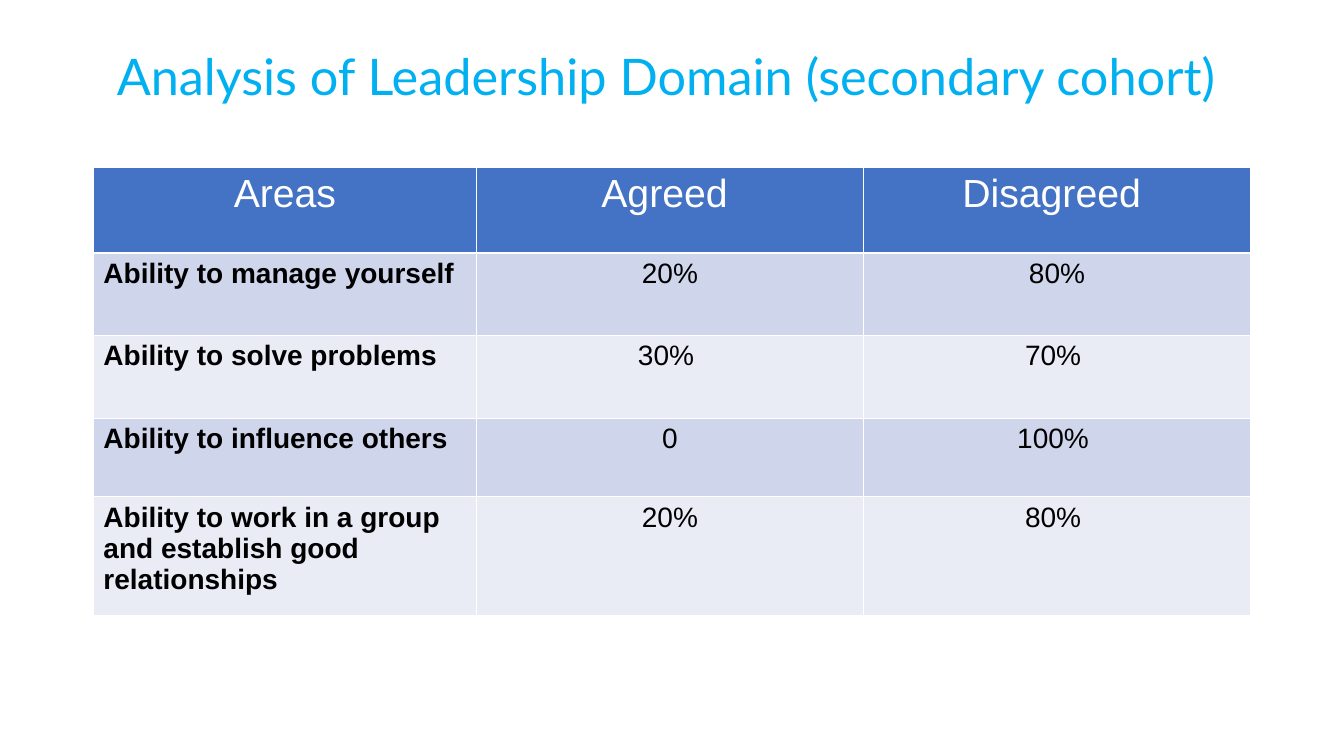
from dataclasses import dataclass

from pptx import Presentation
from pptx.dml.color import RGBColor
from pptx.enum.text import MSO_ANCHOR, MSO_AUTO_SIZE, PP_ALIGN
from pptx.util import Inches, Pt

LEFT, CENTER = PP_ALIGN.LEFT, PP_ALIGN.CENTER
MIDDLE = MSO_ANCHOR.MIDDLE
GROW = MSO_AUTO_SIZE.SHAPE_TO_FIT_TEXT
TITLE_ONLY = 5


@dataclass(frozen=True)
class Theme:
    """Colours, fonts and type sizes of the slide."""

    title_color: str = "00B0F0"
    header_fill: str = "4472C4"
    header_color: str = "FFFFFF"
    text_color: str = "000000"
    band_fills: tuple = ("CFD5EA", "E9EBF5")
    title_font: str = "Lato"
    table_font: str = "Arial"
    title_size: int = 36
    header_size: int = 28
    cell_size: int = 20


class SlideBuilder:
    """Places elements by percentages of the slide's width and height."""

    def __init__(self, presentation, theme):
        """Adds a slide with a title placeholder."""
        self.width = presentation.slide_width
        self.height = presentation.slide_height
        self.theme = theme
        self.slide = presentation.slides.add_slide(presentation.slide_layouts[TITLE_ONLY])

    def across(self, share):
        """Turns a percentage of the width into a length."""
        return round(self.width * share / 100)

    def down(self, share):
        """Turns a percentage of the height into a length."""
        return round(self.height * share / 100)

    def add_text(self, text_frame, text, alignment, color, **font_format):
        """Fills a text frame with one formatted paragraph."""
        paragraph = text_frame.paragraphs[0]
        paragraph.alignment = alignment
        run = paragraph.add_run()
        run.text = text
        for name, value in font_format.items():
            setattr(run.font, name, value)
        run.font.color.rgb = RGBColor.from_string(color)

    def title(self, text, left, top, width, height):
        """Moves and fills the title placeholder."""
        shape = self.slide.shapes.title
        placement = {"left": self.across(left), "top": self.down(top),
                     "width": self.across(width), "height": self.down(height)}
        for name, value in placement.items():
            setattr(shape, name, value)
        frame_format = {"word_wrap": True, "auto_size": GROW, "vertical_anchor": MIDDLE}
        for name, value in frame_format.items():
            setattr(shape.text_frame, name, value)
        self.add_text(shape.text_frame, text, CENTER, self.theme.title_color,
                      name=self.theme.title_font, size=Pt(self.theme.title_size), bold=False)

    def table(self, records, left, top, column_shares, row_shares):
        """Adds a table with a header row, banded rows and bold row labels."""
        theme = self.theme
        table = self.slide.shapes.add_table(
            len(row_shares), len(column_shares), self.across(left), self.down(top),
            self.across(sum(column_shares)), self.down(sum(row_shares))).table
        for column, share in zip(table.columns, column_shares):
            column.width = self.across(share)
        for row_index, (share, record) in enumerate(zip(row_shares, records)):
            table.rows[row_index].height = self.down(share)
            is_header = row_index == 0
            fill = theme.header_fill if is_header else theme.band_fills[(row_index - 1) % 2]
            color = theme.header_color if is_header else theme.text_color
            size = theme.header_size if is_header else theme.cell_size
            for column_index, text in enumerate(record):
                is_label = column_index == 0 and not is_header
                cell = table.cell(row_index, column_index)
                cell.fill.solid()
                cell.fill.fore_color.rgb = RGBColor.from_string(fill)
                self.add_text(cell.text_frame, text, LEFT if is_label else CENTER, color,
                              name=theme.table_font, size=Pt(size), bold=is_label)


def main():
    """Builds and saves the leadership slide."""
    presentation = Presentation()
    presentation.slide_width = Inches(13.33)
    presentation.slide_height = Inches(7.5)
    builder = SlideBuilder(presentation, Theme())
    survey = [
        ("Areas", "Agreed ", "Disagreed "),
        ("Ability to manage yourself", "20%", "80%"),
        ("Ability to solve problems", "30% ", "70% "),
        ("Ability to influence others", "0", "100% "),
        ("Ability to work in a group and establish good relationships", "20%", "80% "),
    ]
    builder.table(survey, left=6.95, top=22.13, column_shares=(28.5, 28.8, 28.8),
                  row_shares=(11.33, 10.93, 10.93, 10.4, 15.73))
    builder.title("Analysis of Leadership Domain (secondary cohort) ",
                  left=2.93, top=5.2, width=94.22, height=9.47)
    presentation.save("out.pptx")


if __name__ == "__main__":
    main()
